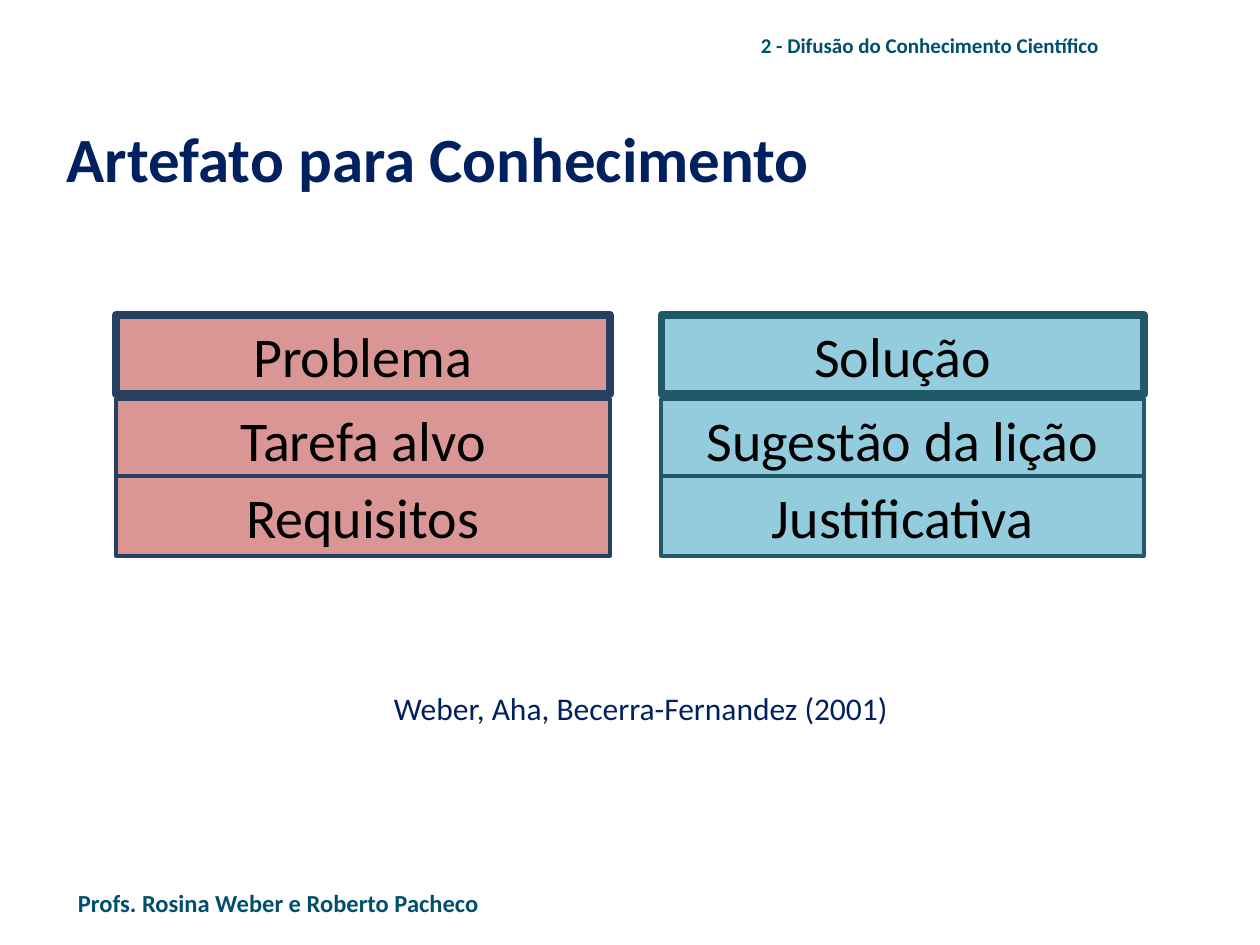
import pptx
import pptx.util
import pptx.dml.color
import pptx.enum.shapes
import pptx.enum.text

Inches = pptx.util.Inches
Pt = pptx.util.Pt
RGB = pptx.dml.color.RGBColor.from_string
SHAPE = pptx.enum.shapes.MSO_SHAPE
ALIGN = pptx.enum.text.PP_ALIGN
ANCHOR = pptx.enum.text.MSO_ANCHOR

COLORS = {
    "teal": "004F6D", "navy": "002060", "black": "000000",
    "rose": "D99694", "rose_line": "254061",
    "aqua": "93CDDD", "aqua_line": "215968",
}

deck = pptx.Presentation()
deck.slide_width = Inches(10)
deck.slide_height = Inches(7.5)
page = deck.slides.add_slide(deck.slide_layouts[6])


def add_text(text, place, preset=None, size=12, color="black", bold=False,
             align=ALIGN.LEFT, anchor=ANCHOR.TOP, indent=0.1,
             fill=None, line=None, line_width=0):
    """Add a text box, or a preset shape when one is given."""
    lengths = [Inches(value) for value in place]
    if preset is None:
        box = page.shapes.add_textbox(*lengths)
    else:
        box = page.shapes.add_shape(preset, *lengths)
        box.shadow.inherit = False
        if fill:
            box.fill.solid()
            box.fill.fore_color.rgb = RGB(COLORS[fill])
            box.line.color.rgb = RGB(COLORS[line])
            box.line.width = Pt(line_width)
        else:
            box.fill.background()
            box.line.fill.background()
    frame = box.text_frame
    frame.word_wrap = True
    frame.vertical_anchor = anchor
    frame.margin_left = Inches(indent)
    para = frame.paragraphs[0]
    para.alignment = align
    span = para.add_run()
    span.text = text
    span.font.name = "Calibri"
    span.font.size = Pt(size)
    span.font.bold = bold
    span.font.color.rgb = RGB(COLORS[color])


add_text("2 - Difusão do Conhecimento Científico", (5.94, 0.21, 3.98, 0.3),
         color="teal", bold=True)
add_text("Profs. Rosina Weber e Roberto Pacheco", (0.52, 7, 3.62, 0.34),
         size=14, color="teal", bold=True)
add_text("Artefato para Conhecimento", (0.03, 0.75, 10, 0.92),
         preset=SHAPE.SNIP_1_RECTANGLE, size=36, color="navy", bold=True,
         anchor=ANCHOR.MIDDLE, indent=0.5)

columns = [
    (0.92, 3.92, "rose", ["Problema", "Tarefa alvo", "Requisitos"]),
    (5.25, 3.83, "aqua", ["Solução", "Sugestão da lição", "Justificativa"]),
]
rows = [(2.5, 4.5), (3.17, 2.25), (3.78, 2.25)]
for left, width, hue, labels in columns:
    for label, (top, line_width) in zip(labels, rows):
        add_text(label, (left, top, width, 0.63), preset=SHAPE.RECTANGLE,
                 size=32, align=ALIGN.CENTER, fill=hue, line=hue + "_line",
                 line_width=line_width)

add_text("Weber, Aha, Becerra-Fernandez (2001)", (-0.08, 5.17, 10, 0.83),
         preset=SHAPE.SNIP_1_RECTANGLE, size=18, color="navy",
         align=ALIGN.CENTER, anchor=ANCHOR.MIDDLE, indent=0.5)

deck.save("out.pptx")
